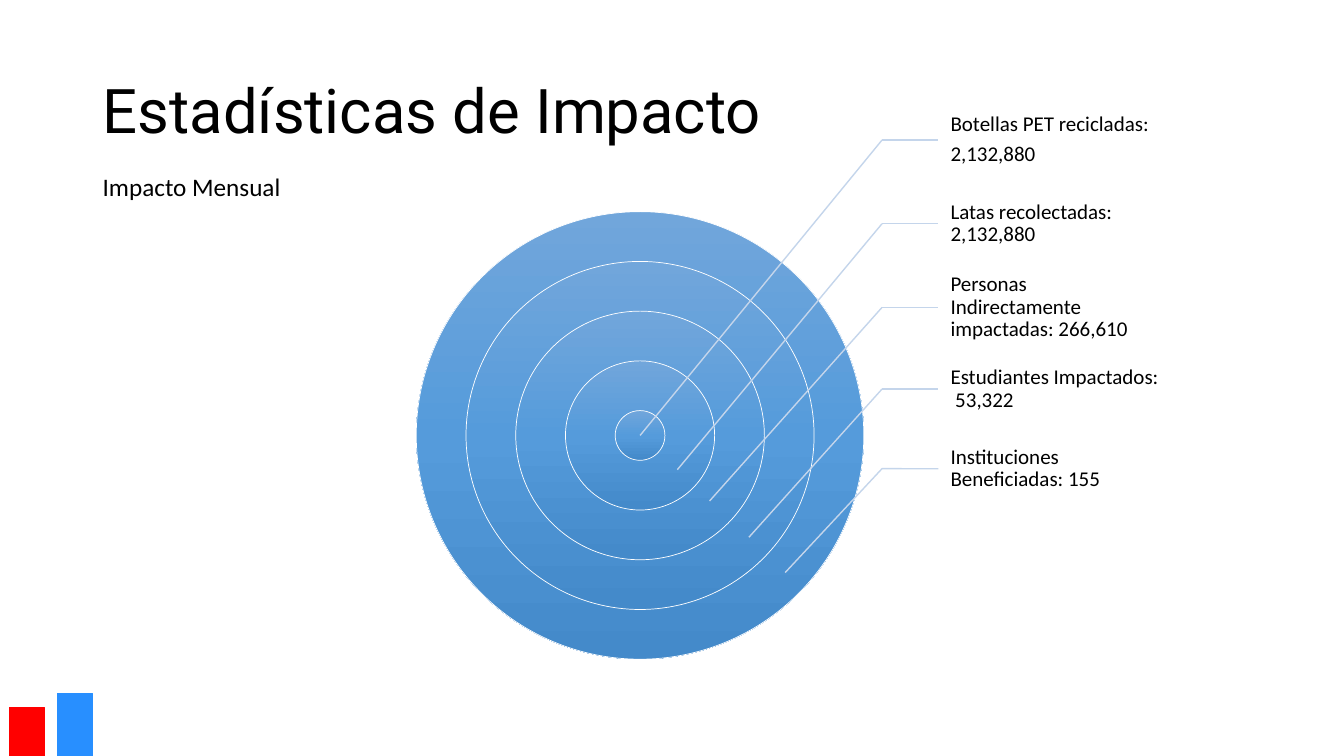
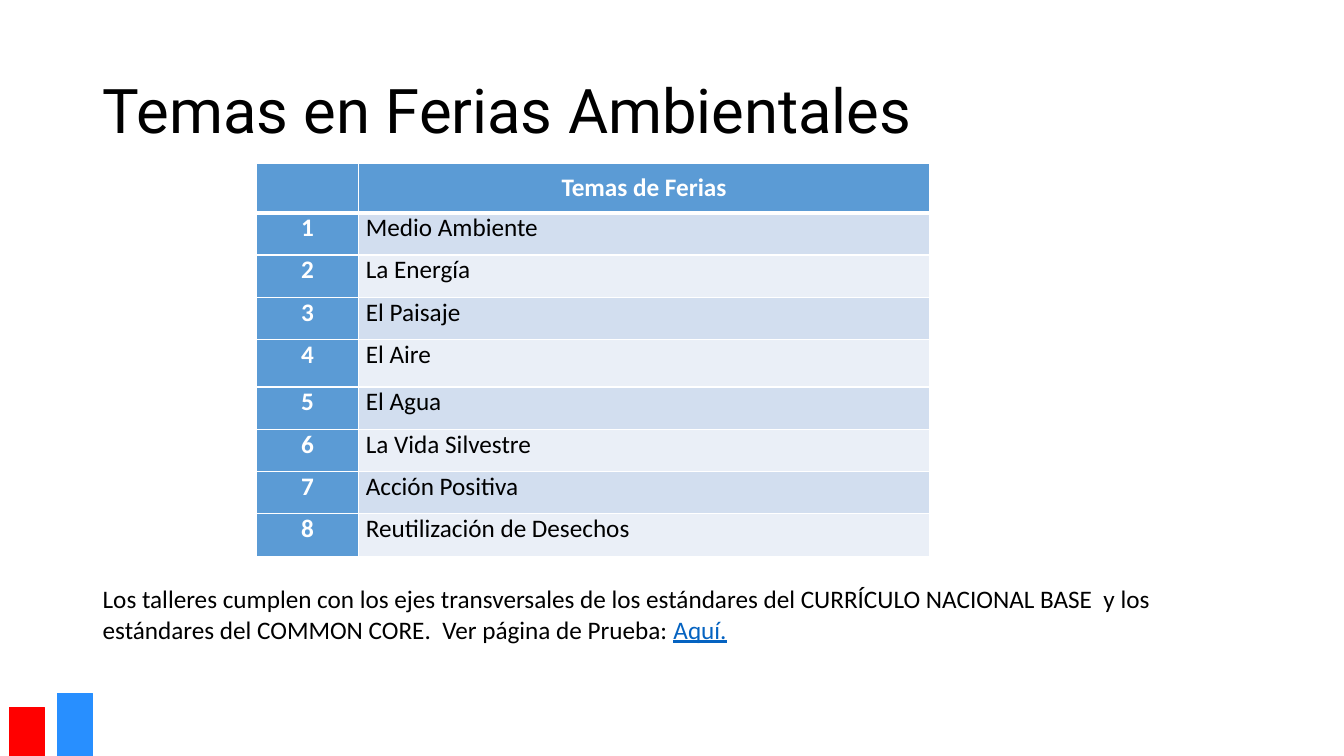
from copy import deepcopy

from pptx import Presentation
from pptx.dml.color import RGBColor
from pptx.enum.shapes import MSO_CONNECTOR as CONNECTOR, MSO_SHAPE as SHAPE
from pptx.enum.text import MSO_ANCHOR as ANCHOR, MSO_AUTO_SIZE as AUTO_SIZE, PP_ALIGN as ALIGN
from pptx.oxml.ns import qn
from pptx.util import Inches, Pt
from lxml.etree import SubElement

BLACK = RGBColor(0x00, 0x00, 0x00)
WHITE = RGBColor(0xFF, 0xFF, 0xFF)
RED = RGBColor(0xFF, 0x00, 0x00)
BRIGHT_BLUE = RGBColor(0x28, 0x8F, 0xFF)
HEADER_BLUE = RGBColor(0x5B, 0x9B, 0xD5)
BAND_DARK = RGBColor(0xD2, 0xDE, 0xEF)
BAND_LIGHT = RGBColor(0xEA, 0xEF, 0xF7)
LEADER_BLUE = RGBColor(0xC4, 0xD5, 0xEB)
LINK_BLUE = RGBColor(0x05, 0x63, 0xC1)
RING_STOPS = [
    (0, RGBColor(0x71, 0xA6, 0xDB)),
    (0.5, RGBColor(0x55, 0x9B, 0xDB)),
    (1, RGBColor(0x44, 0x8A, 0xCA)),
]
TITLE_FONT, BODY_FONT = "Roboto", "Calibri"


def add_span(para, text, size, color=BLACK, font=BODY_FONT, bold=False):
    span = para.add_run()
    span.text = text
    span.font.name, span.font.size = font, Pt(size)
    span.font.bold, span.font.color.rgb = bold, color
    return span


def add_page(deck, title_text):
    page = deck.slides.add_slide(deck.slide_layouts[5])

    # Corner bars, bleeding over the bottom edge
    for left, top, color in [(0.57, 6.88, BRIGHT_BLUE), (0.09, 7.02, RED)]:
        bar = page.shapes.add_shape(
            SHAPE.RECTANGLE, Inches(left), Inches(top), Inches(0.35), Inches(2.19))
        bar.shadow.inherit = False
        bar.fill.solid()
        bar.fill.fore_color.rgb = color
        bar.line.color.rgb = color
        bar.line.width = Pt(0.5)

    # Title
    title = page.shapes.title
    title.left, title.top = Inches(0.92), Inches(0.4)
    title.width, title.height = Inches(11.5), Inches(1.45)
    frame = title.text_frame
    frame.auto_size = AUTO_SIZE.NONE
    frame.vertical_anchor = ANCHOR.MIDDLE
    para = frame.paragraphs[0]
    para.alignment, para.line_spacing = ALIGN.LEFT, 0.9
    add_span(para, title_text, 44, font=TITLE_FONT)
    return page


deck = Presentation()
deck.slide_width, deck.slide_height = Inches(40 / 3), Inches(7.5)

# Slide 1: impact target
page = add_page(deck, "Estadísticas de Impacto")

# Concentric rings, largest first
CENTER_X, CENTER_Y, OUTER_SIZE = 6.35, 4.32, 4.44
for multiple in (9, 7, 5, 3, 1):
    size = OUTER_SIZE * multiple / 9
    ring = page.shapes.add_shape(
        SHAPE.OVAL, Inches(CENTER_X - size / 2), Inches(CENTER_Y - size / 2),
        Inches(size), Inches(size))
    ring.shadow.inherit = False
    ring.fill.gradient()
    ring.fill.gradient_angle = 270
    stop_list = ring._element.spPr.find(qn("a:gradFill")).find(qn("a:gsLst"))
    stop_list.append(deepcopy(stop_list[0]))
    for stop, (position, color) in zip(ring.fill.gradient_stops, RING_STOPS):
        stop.position = position
        stop.color.rgb = color
    ring.line.color.rgb = WHITE
    ring.line.width = Pt(0.5)

# Labels with their leader lines: top, ring point, paragraphs
LABEL_LEFT, LABEL_HEIGHT, ELBOW_X = 9.31, 0.78, 8.75
labels = [
    (1, (6.35, 4.32), ["Botellas PET recicladas:", "2,132,880"]),
    (1.83, (6.72, 4.66), ["Latas recolectadas: 2,132,880"]),
    (2.66, (7.04, 4.97), ["Personas Indirectamente impactadas: 266,610"]),
    (3.47, (7.43, 5.33), ["Estudiantes Impactados:  53,322"]),
    (4.26, (7.79, 5.68), ["Instituciones Beneficiadas: 155"]),
]
for top, (ring_x, ring_y), texts in labels:
    box = page.shapes.add_textbox(
        Inches(LABEL_LEFT), Inches(top), Inches(2.22), Inches(LABEL_HEIGHT))
    frame = box.text_frame
    frame.word_wrap = True
    frame.vertical_anchor = ANCHOR.MIDDLE
    frame.margin_left = Inches(0.12)
    frame.margin_top = frame.margin_right = frame.margin_bottom = Inches(0.02)
    for index, text in enumerate(texts):
        para = frame.add_paragraph() if index else frame.paragraphs[0]
        para.line_spacing, para.space_after = 0.9, Pt(5.25)
        add_span(para, text, 15)

    middle = top + LABEL_HEIGHT / 2
    for end_x, end_y in [(LABEL_LEFT, middle), (ring_x, ring_y)]:
        leader = page.shapes.add_connector(
            CONNECTOR.STRAIGHT, Inches(ELBOW_X), Inches(middle), Inches(end_x), Inches(end_y))
        leader.line.color.rgb = LEADER_BLUE
        leader.line.width = Pt(1)
        SubElement(leader._element.spPr, qn("a:effectLst"))
        if end_x == LABEL_LEFT:
            leader.end_connect(box, 1)

# Subtitle
box = page.shapes.add_textbox(Inches(0.92), Inches(1.65), Inches(1.99), Inches(0.4))
box.text_frame.word_wrap = False
add_span(box.text_frame.paragraphs[0], "Impacto Mensual", 18)

# Slide 2: table of topics
page = add_page(deck, "Temas en Ferias Ambientales")
topics = ["Medio Ambiente", "La Energía", "El Paisaje", "El Aire", "El Agua",
          "La Vida Silvestre", "Acción Positiva", "Reutilización de Desechos"]
rows = [("", "Temas de Ferias")] + [(str(n), topic) for n, topic in enumerate(topics, 1)]
heights = [0.49, 0.42, 0.42, 0.42, 0.47, 0.42, 0.42, 0.42, 0.42]
table = page.shapes.add_table(
    len(rows), 2, Inches(2.54), Inches(1.62), Inches(6.68), Inches(sum(heights))).table
table.columns[0].width, table.columns[1].width = Inches(1.02), Inches(5.66)

for row_index, (texts, height) in enumerate(zip(rows, heights)):
    table.rows[row_index].height = Inches(height)
    for column_index, text in enumerate(texts):
        cell = table.cell(row_index, column_index)
        is_header = row_index == 0 or column_index == 0
        cell.margin_left = cell.margin_right = Inches(0.07)
        cell.margin_top = cell.margin_bottom = 0
        cell.vertical_anchor = ANCHOR.MIDDLE if row_index == 0 else ANCHOR.TOP

        # White borders, thicker between the header and the first topic
        for side in ("L", "R", "T", "B"):
            thick = (row_index, side) in [(0, "B"), (1, "T")]
            border = SubElement(
                cell._tc.get_or_add_tcPr(), qn(f"a:ln{side}"), w=str(Pt(3 if thick else 1)))
            SubElement(SubElement(border, qn("a:solidFill")), qn("a:srgbClr"), val=str(WHITE))

        cell.fill.solid()
        band = BAND_DARK if row_index % 2 else BAND_LIGHT
        cell.fill.fore_color.rgb = HEADER_BLUE if is_header else band
        para = cell.text_frame.paragraphs[0]
        para.alignment = ALIGN.CENTER if is_header else ALIGN.LEFT
        if text:
            add_span(para, text, 18, WHITE if is_header else BLACK, bold=is_header)

# Closing note
box = page.shapes.add_textbox(Inches(0.92), Inches(5.74), Inches(10.65), Inches(0.71))
box.text_frame.word_wrap = True
para = box.text_frame.paragraphs[0]
add_span(para, "Los talleres cumplen con los ejes transversales de los estándares del "
               "CURRÍCULO NACIONAL BASE  y los estándares del COMMON CORE.  "
               "Ver página de Prueba: ", 18)
add_span(para, "Aquí.", 18, LINK_BLUE).font.underline = True

deck.save("out.pptx")
